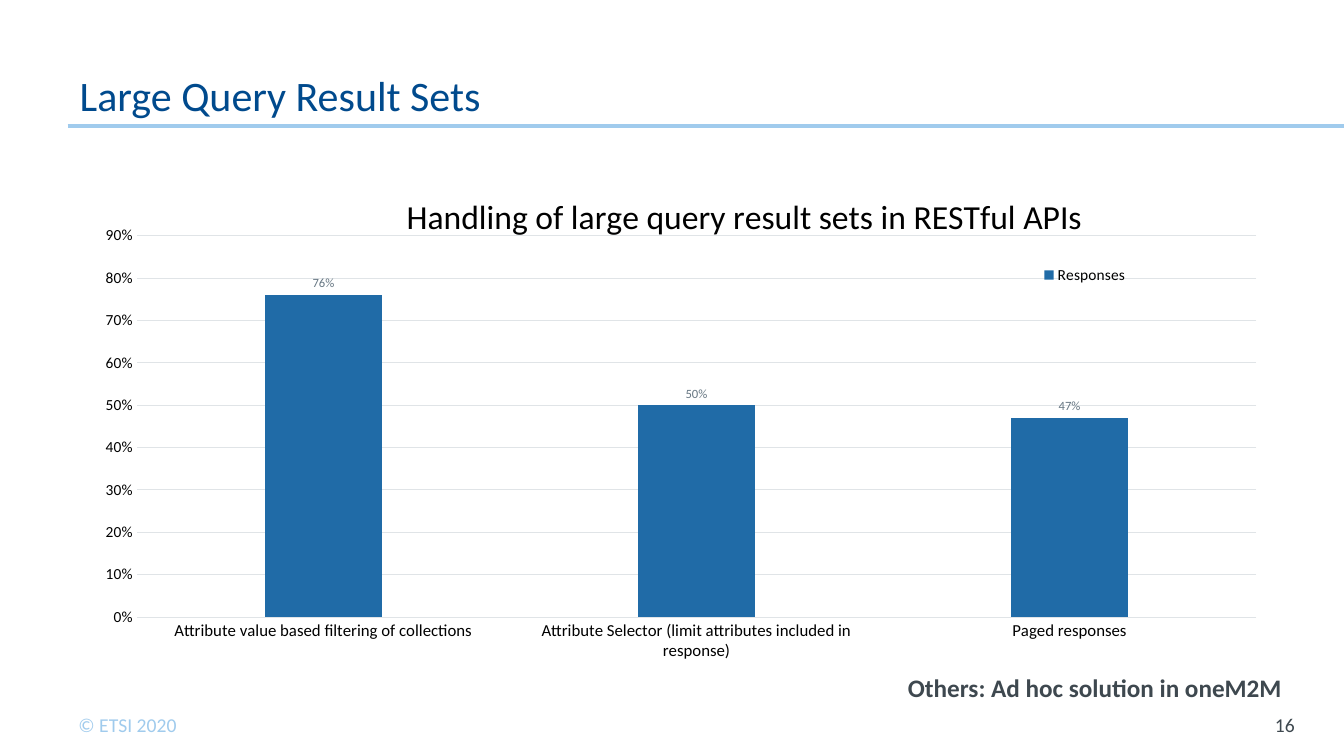
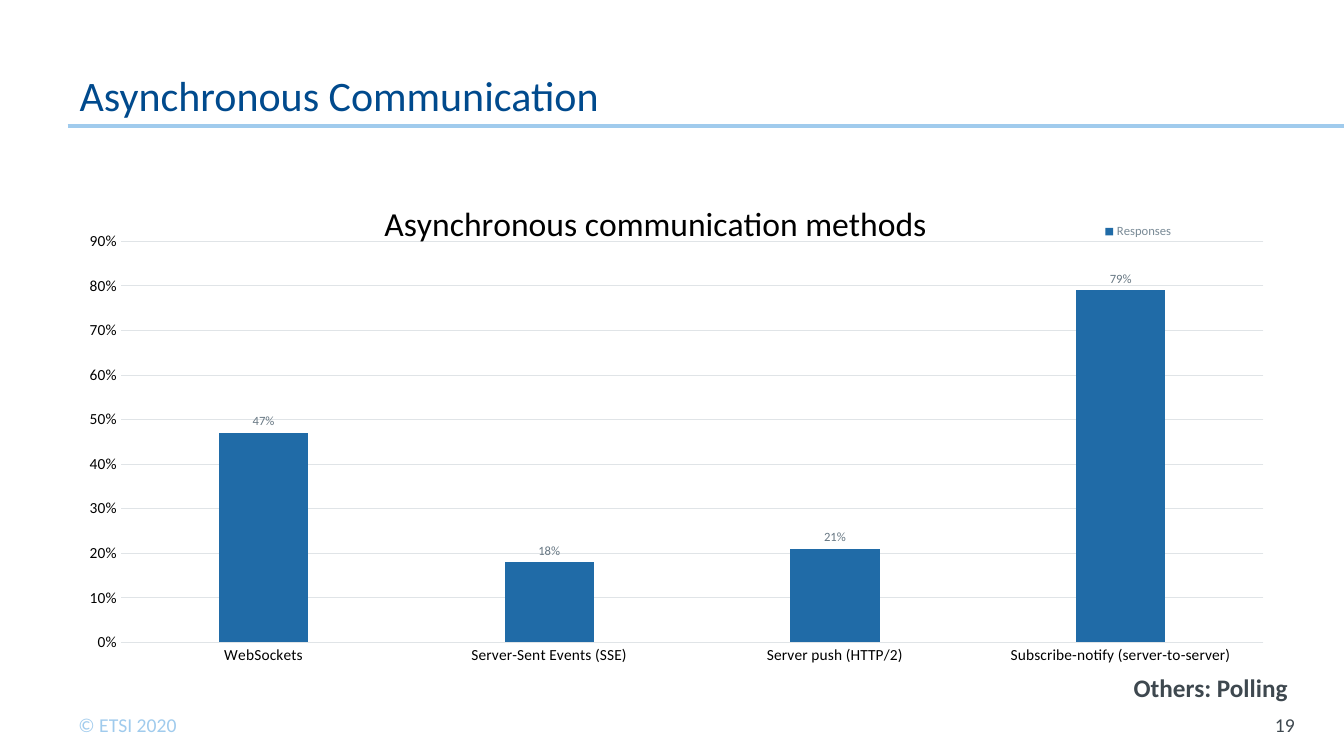
from dataclasses import dataclass

from lxml import etree
from pptx import Presentation
from pptx.chart.axis import CategoryAxis, ValueAxis
from pptx.chart.chart import Chart
from pptx.chart.data import CategoryChartData
from pptx.dml.color import RGBColor
from pptx.enum.chart import XL_CHART_TYPE, XL_LABEL_POSITION, XL_LEGEND_POSITION, XL_TICK_MARK
from pptx.enum.shapes import MSO_CONNECTOR
from pptx.enum.text import MSO_ANCHOR, PP_ALIGN
from pptx.oxml.ns import qn
from pptx.slide import Slide
from pptx.text.text import Font
from pptx.util import Inches, Pt

COLUMNS = XL_CHART_TYPE.COLUMN_CLUSTERED
OUTSIDE_END = XL_LABEL_POSITION.OUTSIDE_END
LEGEND_RIGHT = XL_LEGEND_POSITION.RIGHT
NO_TICK = XL_TICK_MARK.NONE
STRAIGHT = MSO_CONNECTOR.STRAIGHT
TOP, MIDDLE, BOTTOM = MSO_ANCHOR.TOP, MSO_ANCHOR.MIDDLE, MSO_ANCHOR.BOTTOM
LEFT, RIGHT = PP_ALIGN.LEFT, PP_ALIGN.RIGHT

FONT = "Calibri"
COLORS = {
    "title": "004A8D",
    "rule": "A0CBED",
    "body": "3E484F",
    "bar": "206BA7",
    "grid": "E0E4E7",
    "label": "677783",
    "muted": "798A96",
    "black": "000000",
}


@dataclass(frozen=True)
class TextStyle:
    size: float
    color: str
    bold: bool = False
    align: PP_ALIGN = LEFT
    anchor: MSO_ANCHOR = TOP
    margins: tuple[float, float, float, float] = (0.1, 0.05, 0.1, 0.05)
    line_spacing: float | None = None


@dataclass(frozen=True)
class SurveySlide:
    title: str
    number: int
    chart_title: str
    responses: dict[str, float]
    others: str
    others_width: float
    category_size: float
    legend_size: float
    legend_color: str
    plot_layout: dict[str, float]
    title_layout: dict[str, float]
    legend_layout: dict[str, float]


TITLE = TextStyle(30, "title", anchor=BOTTOM, margins=(0.12, 0.06, 0.12, 0.06), line_spacing=30)
COPYRIGHT = TextStyle(14, "rule")
PAGE_NUMBER = TextStyle(14, "body", align=RIGHT, anchor=MIDDLE, margins=(0, 0.05, 0.1, 0.05))
OTHERS = TextStyle(18, "body", bold=True, align=RIGHT)
OTHERS_RIGHT = 12.87

SURVEY_SLIDES = [
    SurveySlide(
        title="Large Query Result Sets",
        number=16,
        chart_title="Handling of large query result sets in RESTful APIs",
        responses={
            "Attribute value based filtering of collections": 0.76,
            "Attribute Selector (limit attributes included in response)": 0.5,
            "Paged responses": 0.47,
        },
        others="Others: Ad hoc solution in oneM2M ",
        others_width=4,
        category_size=12,
        legend_size=11,
        legend_color="black",
        plot_layout={"x": 0.056, "y": 0.115, "w": 0.904, "h": 0.739},
        title_layout={"x": 0.269, "y": 0.022},
        legend_layout={"x": 0.785, "y": 0.165},
    ),
    SurveySlide(
        title="Asynchronous Communication",
        number=19,
        chart_title="Asynchronous communication methods",
        responses={
            "WebSockets": 0.47,
            "Server-Sent Events (SSE)": 0.18,
            "Server push (HTTP/2)": 0.21,
            "Subscribe-notify (server-to-server)": 0.79,
        },
        others="Others: Polling",
        others_width=1.74,
        category_size=11,
        legend_size=9,
        legend_color="muted",
        plot_layout={"x": 0.043, "y": 0.126, "w": 0.923, "h": 0.777},
        title_layout={"x": 0.251, "y": 0.036},
        legend_layout={"x": 0.835, "y": 0.085},
    ),
]


def rgb(name: str) -> RGBColor:
    return RGBColor.from_string(COLORS[name])


def set_font(font: Font, size: float, color: str, bold: bool = False) -> None:
    font.name = FONT
    font.size = Pt(size)
    font.bold = bold
    font.color.rgb = rgb(color)


def add_text(slide: Slide, text: str, box: tuple[float, float, float, float],
             style: TextStyle, wrap: bool = True) -> None:
    frame = slide.shapes.add_textbox(*map(Inches, box)).text_frame
    frame.word_wrap = wrap
    frame.vertical_anchor = style.anchor
    left, top, right, bottom = map(Inches, style.margins)
    frame.margin_left, frame.margin_top = left, top
    frame.margin_right, frame.margin_bottom = right, bottom
    paragraph = frame.paragraphs[0]
    paragraph.alignment = style.align
    if style.line_spacing:
        paragraph.line_spacing = Pt(style.line_spacing)
    run = paragraph.add_run()
    run.text = text
    set_font(run.font, style.size, style.color, style.bold)


def add_rule(slide: Slide) -> None:
    rule = slide.shapes.add_connector(STRAIGHT, Inches(0.67), Inches(1.25), Inches(13.33), Inches(1.25))
    rule.line.color.rgb = rgb("rule")
    rule.line.width = Pt(2.25)
    etree.SubElement(rule.element.spPr, qn("a:effectLst"))


def place(chart: Chart, part: str, fractions: dict[str, float]) -> None:
    element = chart.element.find(f".//{qn(part)}")
    for old_layout in element.findall(qn("c:layout")):
        element.remove(old_layout)
    layout = etree.Element(qn("c:layout"))
    manual = etree.SubElement(layout, qn("c:manualLayout"))
    if part == "c:plotArea":
        etree.SubElement(manual, qn("c:layoutTarget"), val="inner")
    for axis in "xy":
        etree.SubElement(manual, qn(f"c:{axis}Mode"), val="edge")
    for key, fraction in fractions.items():
        etree.SubElement(manual, qn(f"c:{key}"), val=str(fraction))
    overlay = element.find(qn("c:overlay"))
    if overlay is None:
        element.insert(0, layout)
    else:
        overlay.addprevious(layout)


def style_axis(axis: CategoryAxis | ValueAxis, size: float) -> None:
    axis.major_tick_mark = NO_TICK
    axis.minor_tick_mark = NO_TICK
    set_font(axis.tick_labels.font, size, "black")


def style_axes(chart: Chart, category_size: float) -> None:
    categories, values = chart.category_axis, chart.value_axis
    style_axis(categories, category_size)
    style_axis(values, 11)
    values.minimum_scale, values.maximum_scale, values.major_unit = 0, 0.9, 0.1
    values.tick_labels.number_format = "0%"
    values.tick_labels.number_format_is_linked = False
    values.format.line.fill.background()
    values.has_major_gridlines = True
    for line in (categories.format.line, values.major_gridlines.format.line):
        line.color.rgb = rgb("grid")
        line.width = Pt(0.75)


def style_columns(chart: Chart) -> None:
    plot = chart.plots[0]
    plot.gap_width, plot.overlap = 219, -27
    plot.vary_by_categories = False
    series = plot.series[0]
    series.format.fill.solid()
    series.format.fill.fore_color.rgb = rgb("bar")
    labels = series.data_labels
    labels.show_value = True
    labels.position = OUTSIDE_END
    labels.number_format = "0%"
    labels.number_format_is_linked = False
    set_font(labels.font, 9, "label")


def add_response_chart(slide: Slide, survey: SurveySlide) -> None:
    data = CategoryChartData(number_format="0%")
    data.categories = list(survey.responses)
    data.add_series("Responses", list(survey.responses.values()))
    box = map(Inches, (0.67, 1.75, 12.28, 5.12))
    chart = slide.shapes.add_chart(COLUMNS, *box, data).chart
    set_font(chart.font, 10, "body")
    style_axes(chart, survey.category_size)
    style_columns(chart)
    chart.has_title = True
    run = chart.chart_title.text_frame.paragraphs[0].add_run()
    run.text = survey.chart_title
    set_font(run.font, 24, "black")
    chart.has_legend = True
    chart.legend.position = LEGEND_RIGHT
    chart.legend.include_in_layout = False
    set_font(chart.legend.font, survey.legend_size, survey.legend_color)
    place(chart, "c:plotArea", survey.plot_layout)
    place(chart, "c:title", survey.title_layout)
    place(chart, "c:legend", survey.legend_layout)


def add_survey_slide(presentation: Presentation, survey: SurveySlide) -> None:
    slide = presentation.slides.add_slide(presentation.slide_layouts[6])
    add_rule(slide)
    add_text(slide, "© ETSI 2020", (0.68, 7.02, 1.34, 0.34), COPYRIGHT)
    add_text(slide, str(survey.number), (12.25, 6.99, 0.69, 0.4), PAGE_NUMBER)
    add_text(slide, survey.title, (0.67, 0.3, 10.42, 0.95), TITLE)
    add_response_chart(slide, survey)
    others_box = (OTHERS_RIGHT - survey.others_width, 6.62, survey.others_width, 0.4)
    add_text(slide, survey.others, others_box, OTHERS, wrap=False)


def main() -> None:
    presentation = Presentation()
    presentation.slide_width = Inches(13.33)
    presentation.slide_height = Inches(7.5)
    for survey in SURVEY_SLIDES:
        add_survey_slide(presentation, survey)
    presentation.save("out.pptx")


if __name__ == "__main__":
    main()
